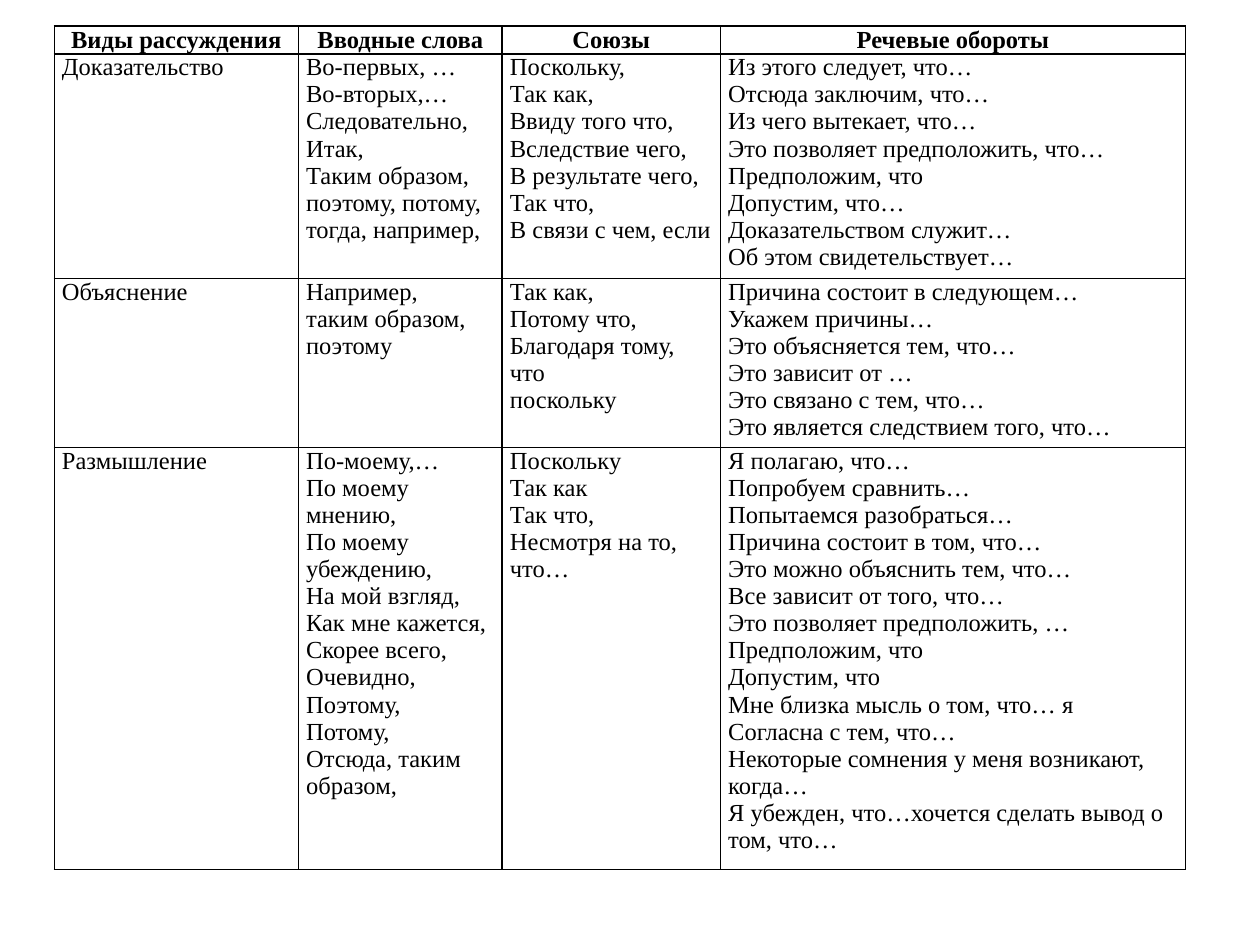
from lxml.etree import SubElement
from pptx import Presentation
from pptx.dml.color import RGBColor
from pptx.enum.text import MSO_ANCHOR, PP_ALIGN
from pptx.oxml.ns import qn
from pptx.util import Pt

HUES = {"ink": "000000"}
FONT = {"name": "Times New Roman", "size": Pt(14)}
CELL = {
    "margin_left": Pt(4.4), "margin_right": Pt(4.4),
    "margin_top": Pt(0), "margin_bottom": Pt(0),
    "vertical_anchor": MSO_ANCHOR.TOP,
}
WIDE = [139.5, 116.5, 124.75, 265.75]
HIGH = [15.84, 128.4, 96.5, 241.2]

# Table text: rows of cells, one line for each paragraph
ROWS = [
    ["Виды рассуждения", "Вводные слова", "Союзы", "Речевые обороты"],
    [
        "Доказательство",
        """Во-первых, …
Во-вторых,…
Следовательно,
Итак,
Таким образом,
поэтому, потому, тогда, например,""",
        """Поскольку,
Так как,
Ввиду того что,
Вследствие чего,
В результате чего,
Так что,
В связи с чем, если""",
        """Из этого следует, что…
Отсюда заключим, что…
Из чего вытекает, что…
Это позволяет предположить, что…
Предположим, что
Допустим, что…
Доказательством служит…
Об этом свидетельствует…""",
    ],
    [
        "Объяснение",
        """Например,
таким образом,
поэтому""",
        """Так как,
Потому что,
Благодаря тому, что
поскольку""",
        """Причина состоит в следующем…
Укажем причины…
Это объясняется тем, что…
Это зависит от …
Это связано с тем, что…
Это является следствием того, что…""",
    ],
    [
        "Размышление",
        """По-моему,…
По моему мнению,
По моему убеждению,
На мой взгляд,
Как мне кажется,
Скорее всего,
Очевидно,
Поэтому,
Потому,
Отсюда, таким образом,""",
        """Поскольку
Так как
Так что,
Несмотря на то, что…""",
        """Я полагаю, что…
Попробуем сравнить…
Попытаемся разобраться…
Причина состоит в том, что…
Это можно объяснить тем, что…
Все зависит от того, что…
Это позволяет предположить, …
Предположим, что
Допустим, что
Мне близка мысль о том, что… я
Согласна с тем, что…
Некоторые сомнения у меня возникают, когда…
Я убежден, что…хочется сделать вывод о том, что…""",
    ],
]


def rule(cell):
    """Draw a thin line on all four sides of a cell."""
    props = cell._tc.get_or_add_tcPr()
    for spot, side in enumerate("LRTB"):
        line = SubElement(props, qn(f"a:ln{side}"), w=str(Pt(1)))
        fill = SubElement(line, qn("a:solidFill"))
        SubElement(fill, qn("a:srgbClr"), val=HUES["ink"])
        props.insert(spot, line)


# Slide
deck = Presentation()
deck.slide_width, deck.slide_height = Pt(720), Pt(540)
slide = deck.slides.add_slide(deck.slide_layouts[6])

# Table grid
frame = slide.shapes.add_table(
    len(HIGH), len(WIDE), Pt(31), Pt(15), Pt(sum(WIDE)), Pt(sum(HIGH)))
table = frame.table
table.first_row = table.horz_banding = False
for col, width in zip(table.columns, WIDE):
    col.width = Pt(width)
for row, height in zip(table.rows, HIGH):
    row.height = Pt(height)

# Cells
for r, row in enumerate(ROWS):
    for c, text in enumerate(row):
        cell = table.cell(r, c)
        for key, value in CELL.items():
            setattr(cell, key, value)
        cell.fill.background()
        rule(cell)
        cell.text = text
        for para in cell.text_frame.paragraphs:
            para.alignment = PP_ALIGN.LEFT if r else PP_ALIGN.CENTER
            for run in para.runs:
                for key, value in FONT.items():
                    setattr(run.font, key, value)
                run.font.bold = r == 0
                run.font.color.rgb = RGBColor.from_string(HUES["ink"])

deck.save("out.pptx")
